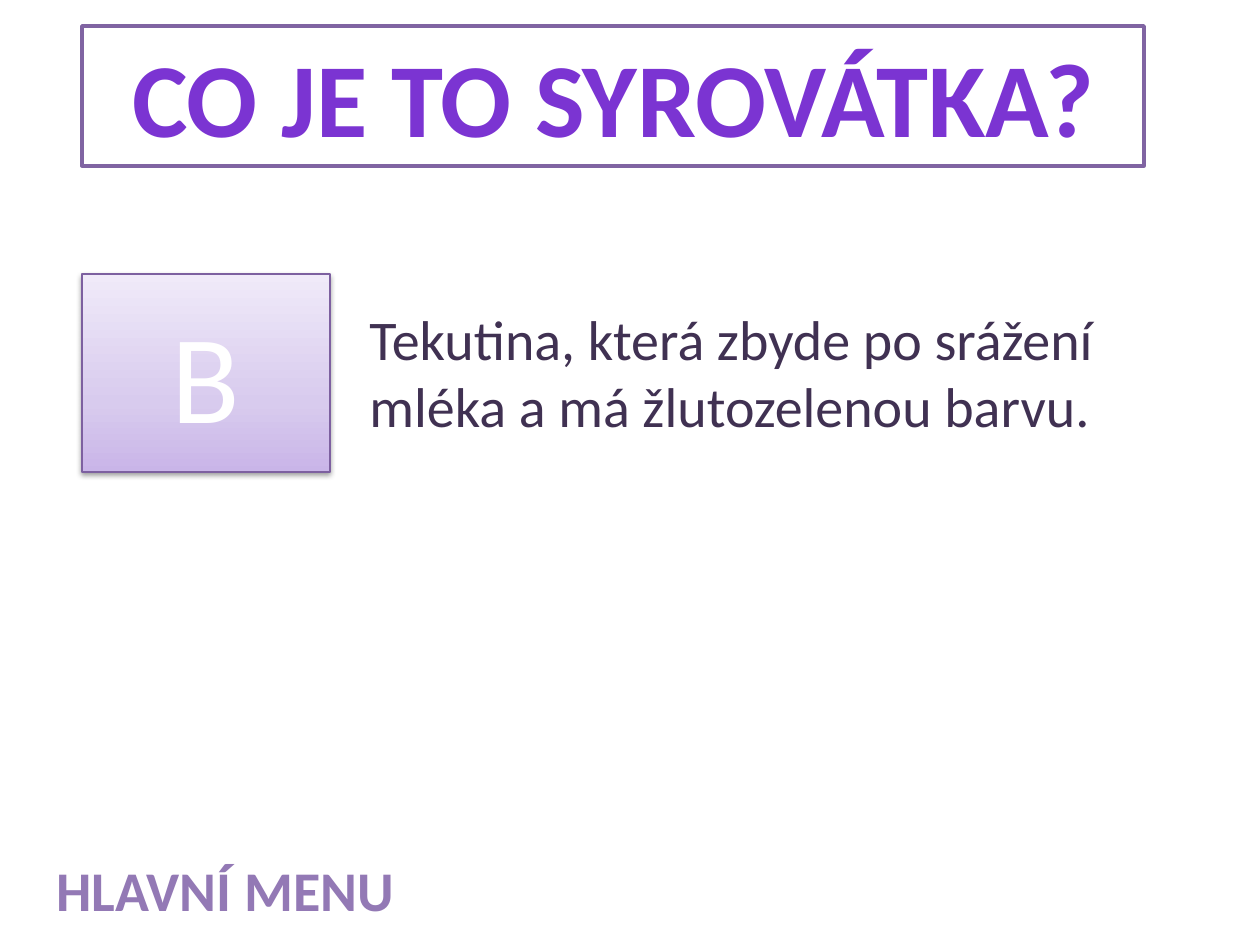
from copy import deepcopy

from lxml.etree import SubElement
from pptx import Presentation
from pptx.dml.color import RGBColor
from pptx.enum.shapes import MSO_SHAPE
from pptx.enum.text import MSO_ANCHOR, MSO_AUTO_SIZE, PP_ALIGN
from pptx.oxml.ns import qn
from pptx.util import Pt

PX = 914400 / 126
FONT = "Calibri"
COLOURS = {
    "white": "FFFFFF",
    "title": "7B34D2",
    "title_line": "8064A2",
    "menu": "9379B5",
    "answer": "403152",
    "badge_line": "7D60A0",
    "shadow": "000000",
}
BADGE_STOPS = [(0, "C9B5E8"), (0.35, "D8CBEE"), (1, "F0EAF9")]


def emu(*lengths):
    return [round(length * PX) for length in lengths]


def colour(name):
    return RGBColor.from_string(COLOURS[name])


def write(box, text, size, colour_name, bold=False, align=PP_ALIGN.LEFT,
          anchor=MSO_ANCHOR.TOP, fit=MSO_AUTO_SIZE.SHAPE_TO_FIT_TEXT):
    frame = box.text_frame
    frame.word_wrap = True
    frame.auto_size = fit
    frame.vertical_anchor = anchor
    para = frame.paragraphs[0]
    para.alignment = align
    span = para.add_run()
    span.text = text
    span.font.name = FONT
    span.font.size = Pt(size)
    span.font.bold = bold
    span.font.color.rgb = colour(colour_name)


def add_rectangle(page, area, line_name, line_width):
    box = page.shapes.add_shape(MSO_SHAPE.RECTANGLE, *emu(*area))
    box.shadow.inherit = False
    box.line.color.rgb = colour(line_name)
    box.line.width = Pt(line_width)
    return box


def add_title(page, area, text):
    box = add_rectangle(page, area, "title_line", 2)
    box.fill.solid()
    box.fill.fore_color.rgb = colour("white")
    write(box, text, 60, "title", bold=True, align=PP_ALIGN.CENTER)


def fill_badge(box):
    """Fill with an upward gradient of three stops."""
    box.fill.gradient()
    box.fill.gradient_angle = 90
    stop_list = box.element.spPr.find(qn("a:gradFill")).find(qn("a:gsLst"))
    stop_list.insert(1, deepcopy(stop_list[0]))
    for stop, (position, hex_colour) in zip(box.fill.gradient_stops, BADGE_STOPS):
        stop.position = position
        stop.color.rgb = RGBColor.from_string(hex_colour)


def add_drop_shadow(box):
    effects = box.element.spPr.find(qn("a:effectLst"))
    shadow = SubElement(effects, qn("a:outerShdw"), blurRad=str(Pt(3.1)),
                        dist=str(Pt(1.6)), dir="5400000", rotWithShape="0")
    tint = SubElement(shadow, qn("a:srgbClr"), val=COLOURS["shadow"])
    SubElement(tint, qn("a:alpha"), val="38000")


def add_text(page, area, text, colour_name, bold=False):
    box = page.shapes.add_textbox(*emu(*area))
    write(box, text, 32, colour_name, bold)


def add_answer(page, area, letter, text):
    """Place the letter badge at the left and its answer beside it."""
    left, top, width, height = area
    badge = add_rectangle(page, (left, top, 248, height), "badge_line", 0.75)
    fill_badge(badge)
    add_drop_shadow(badge)
    write(badge, letter, 72, "white", align=PP_ALIGN.CENTER,
          anchor=MSO_ANCHOR.MIDDLE, fit=MSO_AUTO_SIZE.NONE)
    add_text(page, (left + 275, top + 24, width - 275, 149), text, "answer")


def main():
    deck = Presentation()
    deck.slide_width, deck.slide_height = emu(1260, 945)
    page = deck.slides.add_slide(deck.slide_layouts[6])
    add_title(page, (82, 26, 1062, 140), "CO JE TO SYROVÁTKA?")
    add_text(page, (44, 849, 824, 81), "HLAVNÍ MENU", "menu", bold=True)
    add_answer(page, (82, 274, 1128, 198), "B",
               "Tekutina, která zbyde po srážení mléka a má žlutozelenou barvu.")
    deck.save("out.pptx")


if __name__ == "__main__":
    main()
